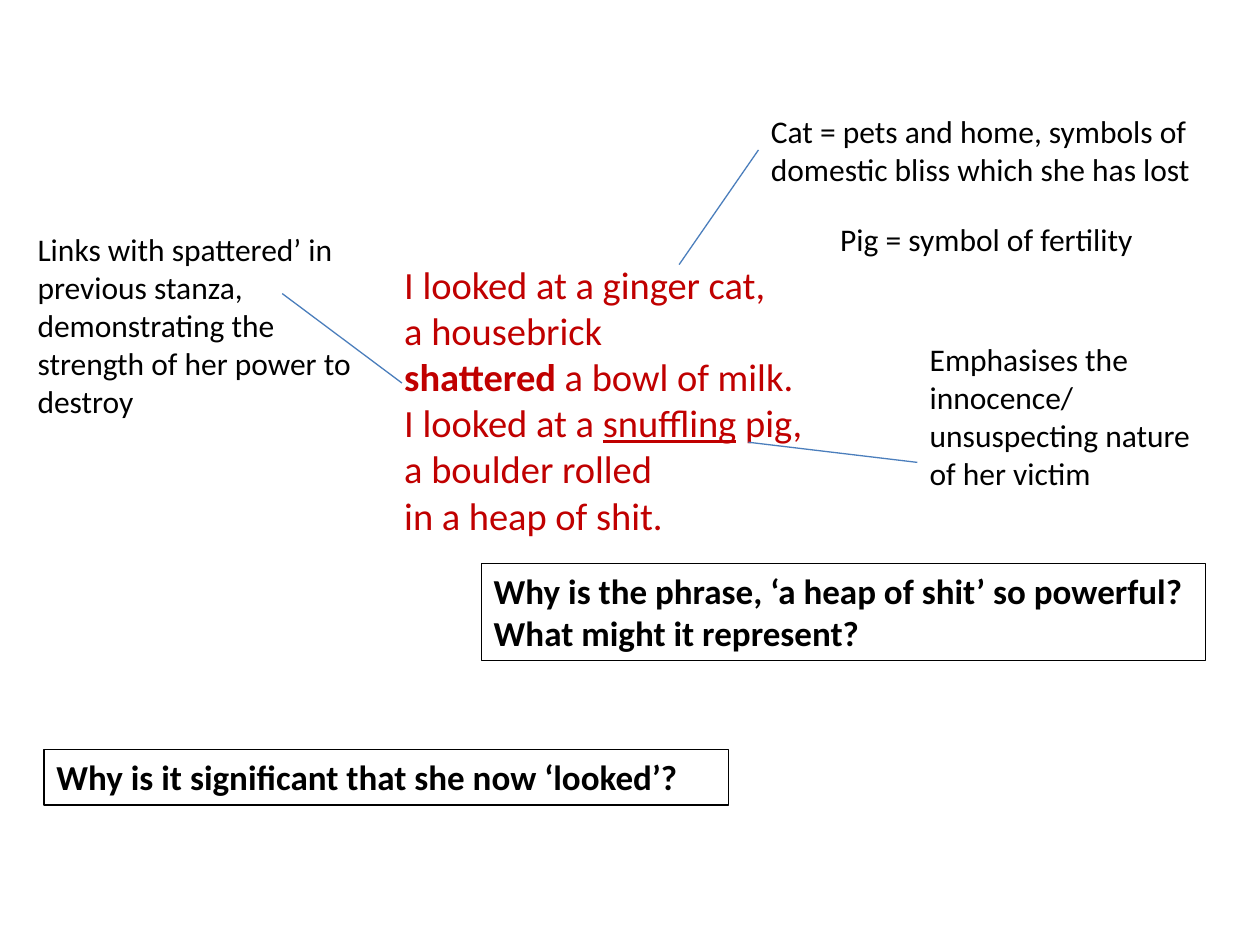
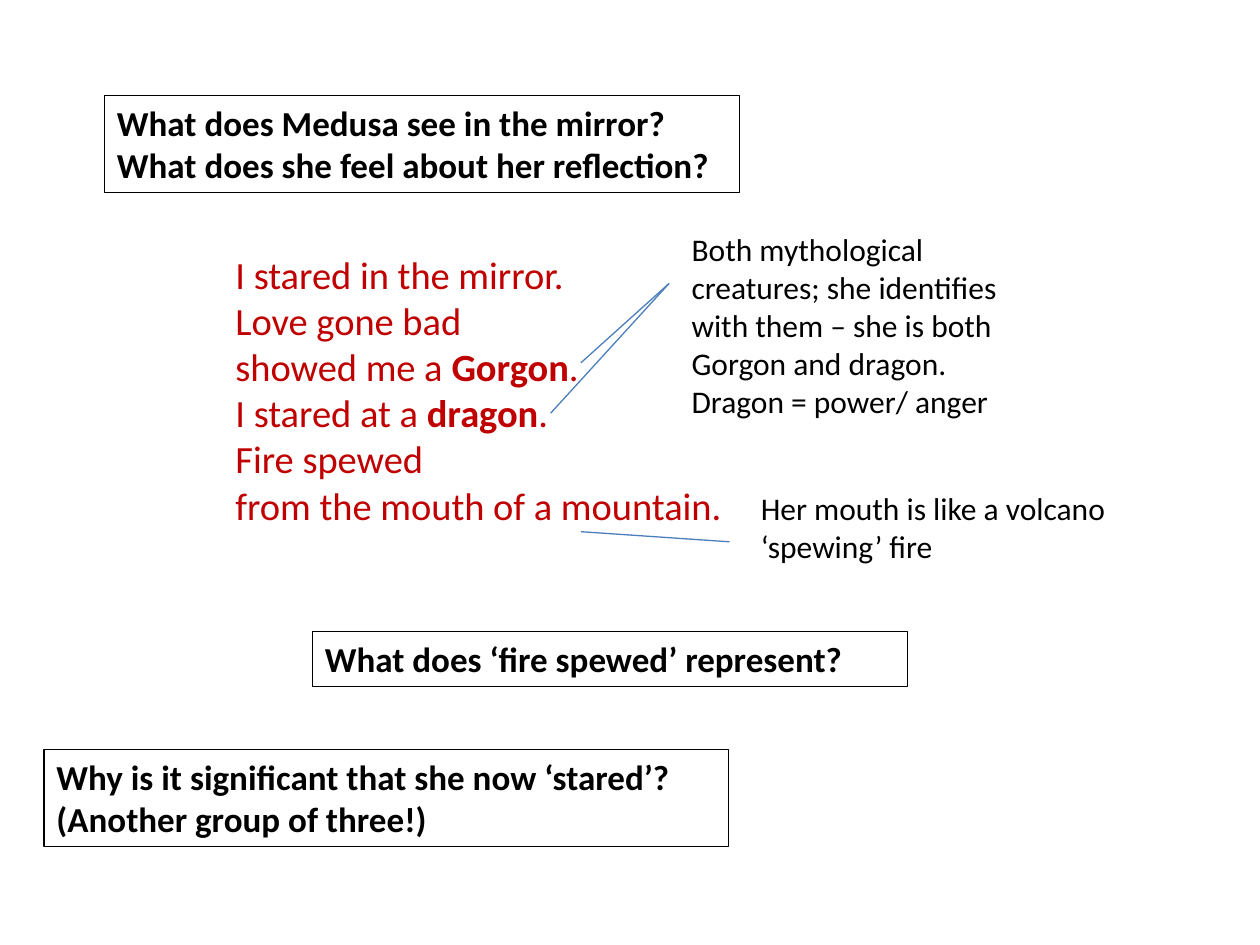
from dataclasses import dataclass
from lxml.etree import SubElement
from pptx import Presentation
from pptx.dml.color import RGBColor as RGB
from pptx.enum.shapes import MSO_CONNECTOR as Connector
from pptx.enum.text import MSO_AUTO_SIZE as AutoSize
from pptx.oxml.ns import qn
from pptx.util import Inches, Pt


@dataclass(frozen=True)
class Theme:
    font: str = "Calibri"
    poem_color: RGB = RGB(0xC0, 0x00, 0x00)
    ink: RGB = RGB(0x00, 0x00, 0x00)
    pointer_color: RGB = RGB(0x4B, 0x7E, 0xBC)
    poem_size: int = 22
    question_size: int = 20
    note_size: int = 18
    line_width: float = 0.75


theme = Theme()


def add_text(slide, place, lines, size, color, bold=False):
    box = slide.shapes.add_textbox(*map(Inches, place))
    frame = box.text_frame
    frame.word_wrap = True
    frame.auto_size = AutoSize.SHAPE_TO_FIT_TEXT
    frame.text = "\n".join(lines)
    for paragraph in frame.paragraphs:
        for run in paragraph.runs:
            run.font.name = theme.font
            run.font.size = Pt(size)
            run.font.color.rgb = color
            run.font.bold = bold
    return box


def emphasise(paragraph, word, style):
    first = paragraph.runs[0]
    before, after = first.text.split(word)
    first.text = before
    for part in (word, after):
        run = paragraph.add_run()
        run.text = part
        run.font.name = theme.font
        run.font.size = Pt(theme.poem_size)
        run.font.color.rgb = theme.poem_color
        run.font.bold = part == word and style == "bold"
        run.font.underline = part == word and style == "underline"


stanzas = [
    {
        "poem_place": (3.11, 2.02, 6.69, 2.32),
        "poem": [
            "I looked at a ginger cat,",
            "a housebrick",
            "shattered a bowl of milk.",
            "I looked at a snuffling pig,",
            "a boulder rolled",
            "in a heap of shit.",
        ],
        "emphasis": [(2, "shattered", "bold"), (3, "snuffling", "underline")],
        "questions": [
            ((3.82, 4.47, 5.75, 0.77),
             ["Why is the phrase, ‘a heap of shit’ so powerful? What might it represent?"]),
            ((0.35, 5.95, 5.43, 0.44),
             ["Why is it significant that she now ‘looked’?"]),
        ],
        "notes": [
            ((0.2, 1.78, 2.83, 1.62),
             "Links with spattered’ in previous stanza, demonstrating the strength of her power to destroy"),
            ((6.02, 0.84, 3.66, 0.71),
             "Cat = pets and home, symbols of domestic bliss which she has lost"),
            ((7.28, 2.65, 2.52, 1.31),
             "Emphasises the innocence/ unsuspecting nature of her victim"),
            ((6.57, 1.7, 3.31, 0.4), "Pig = symbol of fertility"),
        ],
        "pointers": [
            (3.19, 3.04, 2.24, 2.33),
            (5.39, 2.1, 6.02, 1.19),
            (5.94, 3.51, 7.28, 3.67),
        ],
    },
    {
        "poem_place": (1.77, 1.94, 6.69, 2.32),
        "poem": [
            "I stared in the mirror.",
            "Love gone bad",
            "showed me a Gorgon.",
            "I stared at a dragon.",
            "Fire spewed",
            "from the mouth of a mountain.",
        ],
        "emphasis": [(2, "Gorgon", "bold"), (3, "dragon", "bold")],
        "questions": [
            ((0.35, 5.95, 5.43, 0.77),
             ["Why is it significant that she now ‘stared’? (Another group of three!)"]),
            ((0.83, 0.76, 5.04, 0.77),
             ["What does Medusa see in the mirror?",
              "What does she feel about her reflection?"]),
            ((2.48, 5.01, 4.72, 0.44), ["What does ‘fire spewed’ represent?"]),
        ],
        "notes": [
            ((5.39, 1.78, 2.91, 1.62),
             "Both mythological creatures; she identifies with them – she is both "
             "Gorgon and dragon. Dragon = power/ anger"),
            ((5.94, 3.83, 3.54, 0.71), "Her mouth is like a volcano ‘spewing’ fire"),
        ],
        "pointers": [
            (4.61, 2.88, 5.31, 2.25),
            (4.37, 3.28, 5.31, 2.25),
            (5.79, 4.3, 4.61, 4.22),
        ],
    },
]

deck = Presentation()
deck.slide_width = Inches(10)
deck.slide_height = Inches(7.5)
blank_layout = deck.slide_layouts[6]

for stanza in stanzas:
    slide = deck.slides.add_slide(blank_layout)

    poem = add_text(slide, stanza["poem_place"], stanza["poem"],
                    theme.poem_size, theme.poem_color)
    for line_index, word, style in stanza["emphasis"]:
        emphasise(poem.text_frame.paragraphs[line_index], word, style)

    for place, lines in stanza["questions"]:
        question = add_text(slide, place, lines, theme.question_size, theme.ink, bold=True)
        question.line.color.rgb = theme.ink
        question.line.width = Pt(theme.line_width)

    for place, note in stanza["notes"]:
        add_text(slide, place, [note], theme.note_size, theme.ink)

    for ends in stanza["pointers"]:
        pointer = slide.shapes.add_connector(Connector.STRAIGHT, *map(Inches, ends))
        pointer.line.color.rgb = theme.pointer_color
        pointer.line.width = Pt(theme.line_width)
        SubElement(pointer._element.spPr, qn("a:effectLst"))

deck.save("out.pptx")
